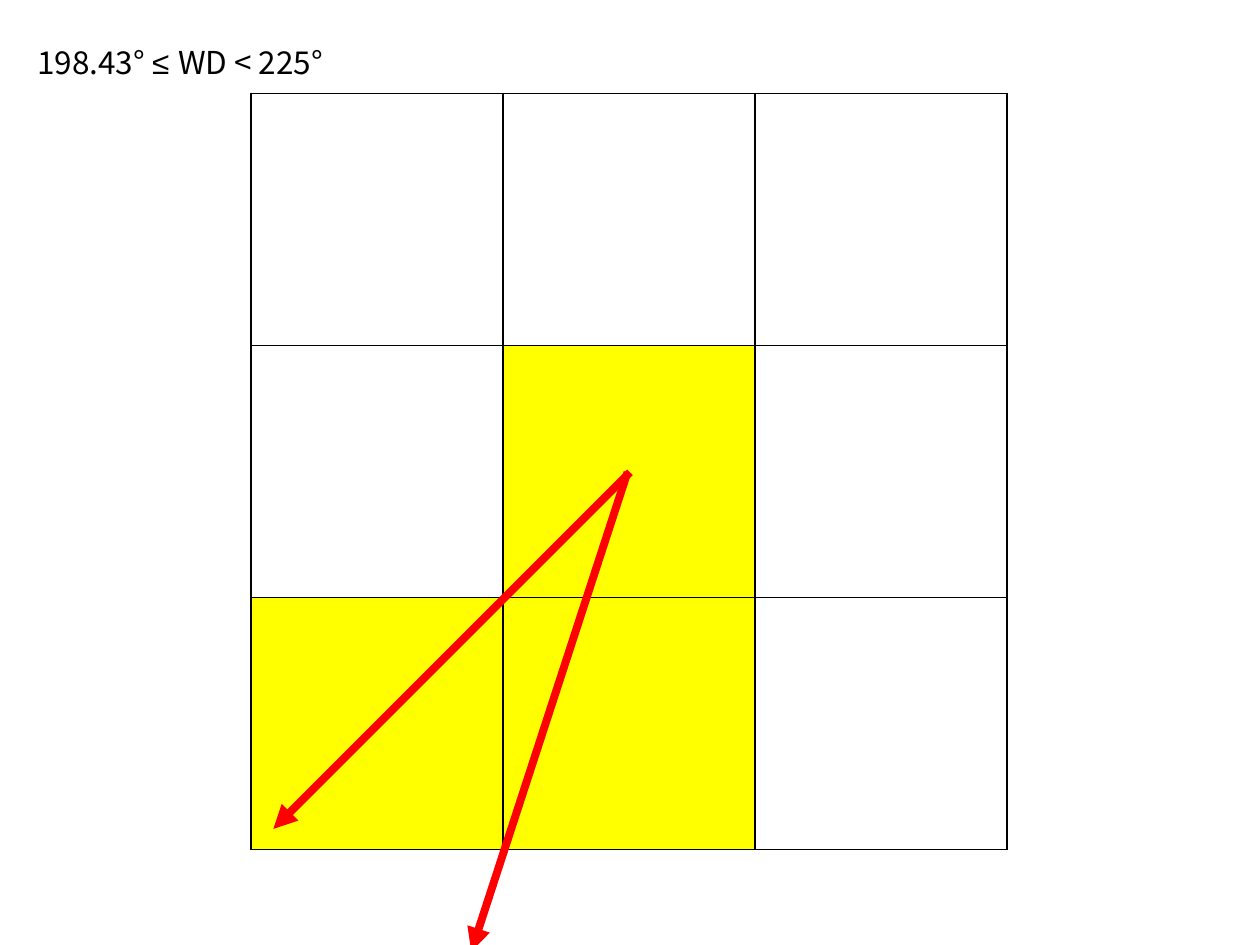
from lxml import etree
from pptx import Presentation
from pptx.dml import color
from pptx.enum import shapes, text
from pptx.oxml import ns
from pptx.util import Cm, Pt

COLORS = {"ink": "000000", "paper": "FFFFFF", "highlight": "FFFF00", "wind": "FF0000"}
FONTS = {"main": "Noto Sans CJK KR", "symbol": "Arial"}


def rgb(name):
    return color.RGBColor.from_string(COLORS[name])


def add_element(parent, tag, **values):
    return etree.SubElement(parent, ns.qn(tag), values)


class Sketch:
    text_size = Pt(18)
    arrow_width = Pt(4.5)
    border_width = Pt(1)

    def __init__(self, page):
        self.page = page

    def border(self, cell):
        properties = cell._tc.get_or_add_tcPr()
        for position, side in enumerate(("a:lnL", "a:lnR", "a:lnT", "a:lnB")):
            line = etree.Element(ns.qn(side), w=str(self.border_width))
            add_element(add_element(line, "a:solidFill"), "a:srgbClr", val=COLORS["ink"])
            properties.insert(position, line)

    def grid(self, left, top, side, fills):
        count = len(fills)
        frame = self.page.shapes.add_table(
            count, count, Cm(left), Cm(top), Cm(side * count), Cm(side * count))
        table = frame.table
        for option in ("first_row", "horz_banding"):
            setattr(table, option, False)
        for index in range(count):
            table.columns[index].width = Cm(side)
            table.rows[index].height = Cm(side)
        for row, names in enumerate(fills):
            for column, name in enumerate(names):
                cell = table.cell(row, column)
                if name:
                    cell.fill.solid()
                    cell.fill.fore_color.rgb = rgb(name)
                else:
                    cell.fill.background()
                self.border(cell)

    def label(self, left, top, width, height, pieces):
        box = self.page.shapes.add_textbox(Cm(left), Cm(top), Cm(width), Cm(height))
        layout = {"word_wrap": False, "auto_size": text.MSO_AUTO_SIZE.SHAPE_TO_FIT_TEXT}
        for name, value in layout.items():
            setattr(box.text_frame, name, value)
        para = box.text_frame.paragraphs[0]
        for words, font in pieces:
            span = para.add_run()
            span.text = words
            for name, value in {"name": FONTS[font], "size": self.text_size}.items():
                setattr(span.font, name, value)
            span.font.color.rgb = rgb("ink")

    def arrow(self, start, end):
        points = [Cm(length) for length in (*start, *end)]
        arrow = self.page.shapes.add_connector(shapes.MSO_CONNECTOR.STRAIGHT, *points)
        arrow.line.width = self.arrow_width
        arrow.line.color.rgb = rgb("wind")
        add_element(arrow.line._get_or_add_ln(), "a:tailEnd", type="triangle")
        add_element(arrow._element.spPr, "a:effectLst")


def main():
    deck = Presentation()
    deck.slide_width, deck.slide_height = Cm(25.4), Cm(19.05)
    sketch = Sketch(deck.slides.add_slide(deck.slide_layouts[6]))
    sketch.grid(5.06, 1.88, 5.08, [
        (None, None, None),
        (None, "highlight", "paper"),
        ("highlight", "highlight", "paper"),
    ])
    sketch.label(0.5, 0.74, 6.7, 1.02, [
        ("198.43° ", "main"), ("≤ ", "symbol"), ("WD < 225°", "main")])
    sketch.arrow((12.7, 9.52), (5.51, 16.71))
    sketch.arrow((12.65, 9.52), (9.5, 19.18))
    deck.save("out.pptx")


if __name__ == "__main__":
    main()
